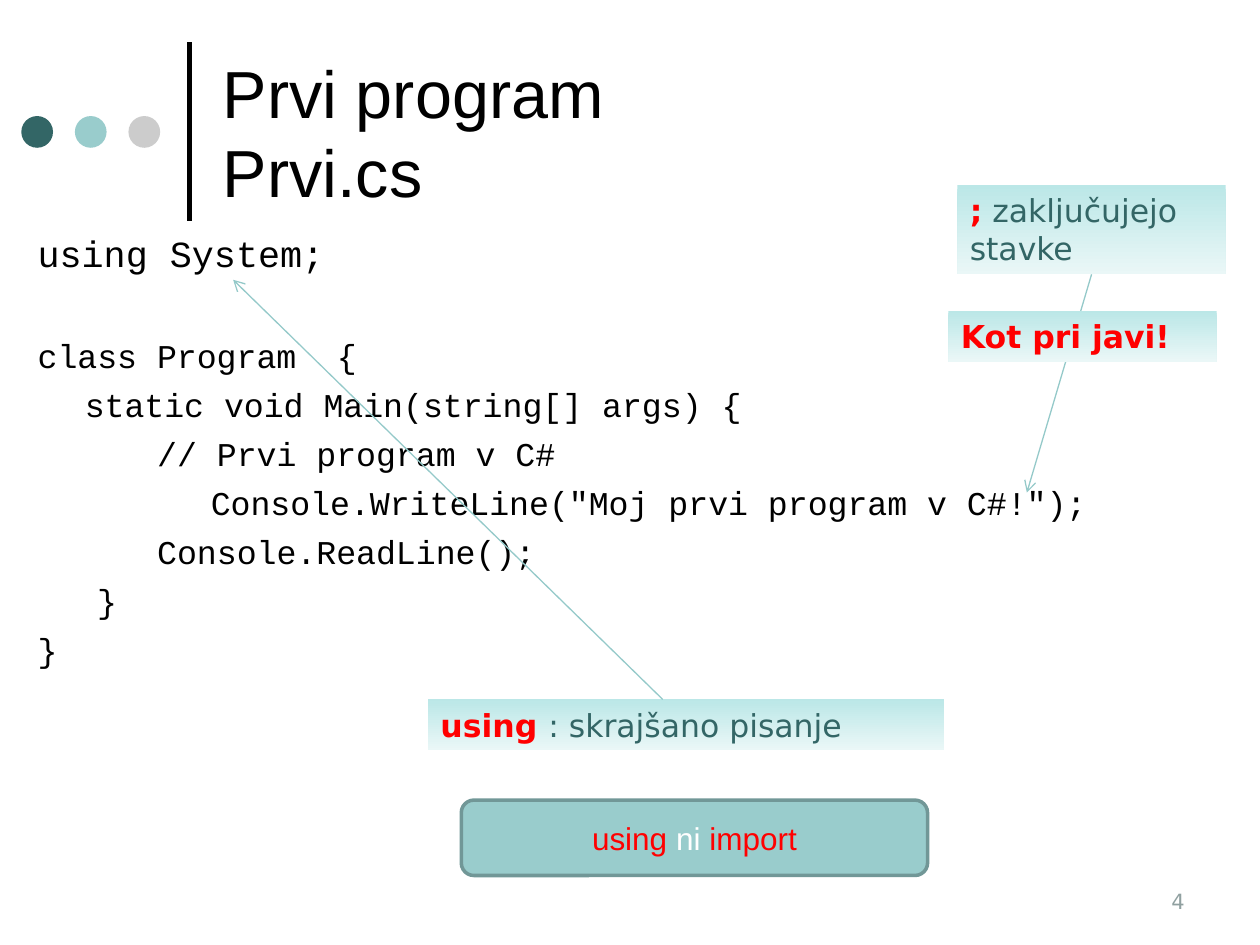
from typing import NamedTuple

from lxml.etree import SubElement
from pptx import Presentation
from pptx.dml.color import RGBColor
from pptx.enum.shapes import MSO_CONNECTOR, MSO_SHAPE
from pptx.enum.text import MSO_ANCHOR, MSO_AUTO_SIZE, PP_ALIGN
from pptx.oxml.ns import qn
from pptx.util import Cm, Pt

BLACK = RGBColor(0x00, 0x00, 0x00)
WHITE = RGBColor(0xFF, 0xFF, 0xFF)
RED = RGBColor(0xFF, 0x00, 0x00)
TEAL = RGBColor(0x33, 0x66, 0x66)
AQUA = RGBColor(0x99, 0xCC, 0xCC)
GREY = RGBColor(0xCC, 0xCC, 0xCC)
EDGE = RGBColor(0x71, 0x97, 0x97)
ARROW = RGBColor(0x94, 0xC9, 0xC9)
MUTED = RGBColor(0x90, 0xA0, 0xA0)
SHADE = (RGBColor(0xBB, 0xE7, 0xE7), RGBColor(0xEA, 0xF7, 0xF7))

SANS, MONO, NOTE = "Arial", "Courier New", "DejaVu Sans"
HANG = 0.95


class Box(NamedTuple):
    left: float
    top: float
    width: float
    height: float

    def cm(self) -> list:
        return [Cm(n) for n in self]


class Run(NamedTuple):
    text: str
    color: RGBColor = BLACK
    bold: bool = False


class Code(NamedTuple):
    text: str
    depth: float = 0
    size: float = 19
    before: float = 5.2


CODE = [
    Code("using System;", size=21),
    Code("class Program\t{", before=35),
    Code("static void Main(string[] args) {", 0.95),
    Code("// Prvi program v C#", 2.41),
    Code('Console.WriteLine("Moj prvi program v C#!");', 3.49),
    Code("Console.ReadLine();", 2.41),
    Code("}", 1.2),
    Code("}"),
]


def write(para, *runs: Run, font=NOTE, size=18, align=PP_ALIGN.LEFT):
    """Fill a paragraph with runs; a newline becomes a line break."""
    para.alignment = align
    for item in runs:
        for row, text in enumerate(item.text.split("\n")):
            if row:
                para.add_line_break()
            run = para.add_run()
            run.text = text
            run.font.name, run.font.size = font, Pt(size)
            run.font.bold = item.bold
            run.font.color.rgb = item.color


def add_shape(slide, kind, box: Box, fill=None, edge=None):
    shape = slide.shapes.add_shape(kind, *box.cm())
    shape.shadow.inherit = False
    if fill:
        shape.fill.solid()
        shape.fill.fore_color.rgb = fill
    if edge:
        shape.line.color.rgb = edge
        shape.line.width = Pt(2)
    else:
        shape.line.fill.background()
    return shape


def add_note(slide, box: Box, *runs: Run):
    note = add_shape(slide, MSO_SHAPE.RECTANGLE, box)
    note.fill.gradient()
    note.fill.gradient_angle = 270
    for stop, color in zip(note.fill.gradient_stops, SHADE):
        stop.color.rgb = color
    frame = note.text_frame
    frame.word_wrap = True
    frame.vertical_anchor = MSO_ANCHOR.TOP
    write(frame.paragraphs[0], *runs)
    return note


def add_line(slide, start, end, color, width, arrow=False):
    line = slide.shapes.add_connector(
        MSO_CONNECTOR.STRAIGHT, *(Cm(n) for n in (*start, *end)))
    line.line.color.rgb = color
    line.line.width = Pt(width)
    if arrow:
        SubElement(line.line._get_or_add_ln(), qn("a:tailEnd"), type="arrow")
    SubElement(line._element.spPr, qn("a:effectLst"))
    return line


def add_title(slide):
    title = slide.shapes.title
    title.left, title.top, title.width, title.height = Box(
        4.24, 0.53, 19.48, 4.24).cm()
    frame = title.text_frame
    frame.auto_size = MSO_AUTO_SIZE.NONE
    frame.vertical_anchor = MSO_ANCHOR.MIDDLE
    write(frame.paragraphs[0], Run("Prvi program\nPrvi.cs"), font=SANS, size=38)


def add_code(slide):
    box = slide.shapes.add_textbox(*Box(0.51, 4.52, 24.33, 11.81).cm())
    box.fill.solid()
    box.fill.fore_color.rgb = WHITE
    frame = box.text_frame
    frame.word_wrap = True
    for row, code in enumerate(CODE):
        para = frame.add_paragraph() if row else frame.paragraphs[0]
        para.space_before = Pt(code.before)
        props = para._p.get_or_add_pPr()
        props.set("marL", str(Cm(code.depth + HANG)))
        props.set("indent", str(Cm(-HANG)))
        write(para, Run(code.text), font=MONO, size=code.size)


def add_page(slide):
    box = slide.shapes.add_textbox(*Box(18.21, 17.65, 5.92, 1.02).cm())
    box.text_frame.word_wrap = True
    box.text_frame.vertical_anchor = MSO_ANCHOR.MIDDLE
    write(box.text_frame.paragraphs[0], Run("4", MUTED), size=12,
          align=PP_ALIGN.RIGHT)


def main():
    deck = Presentation()
    deck.slide_width, deck.slide_height = Cm(25.4), Cm(19.05)
    slide = deck.slides.add_slide(deck.slide_layouts[5])

    add_line(slide, (3.82, 4.45), (3.82, 0.84), BLACK, 3)
    for col, color in enumerate((TEAL, AQUA, GREY)):
        add_shape(slide, MSO_SHAPE.OVAL,
                  Box(0.43 + 1.08 * col, 2.34, 0.64, 0.64), color)
    add_title(slide)
    add_code(slide)
    add_page(slide)

    stop = add_note(slide, Box(19.3, 3.73, 5.41, 1.8),
                    Run(";", RED, True), Run(" zaključujejo stavke", TEAL))
    line = add_line(slide, (22, 5.53), (20.7, 9.93), ARROW, 0.75, arrow=True)
    line.begin_connect(stop, 2)
    add_note(slide, Box(19.12, 6.27, 5.41, 1.02),
             Run("Kot pri javi!", RED, True))

    add_note(slide, Box(8.63, 14.1, 10.4, 1.02),
             Run("using ", RED, True), Run(" : skrajšano pisanje".lstrip(), TEAL))
    add_line(slide, (13.36, 14.1), (4.7, 5.64), ARROW, 0.75, arrow=True)

    rule = add_shape(slide, MSO_SHAPE.ROUNDED_RECTANGLE,
                     Box(9.3, 16.13, 9.4, 1.52), AQUA, EDGE)
    rule.text_frame.vertical_anchor = MSO_ANCHOR.MIDDLE
    write(rule.text_frame.paragraphs[0], Run("using", RED), Run(" ni ", WHITE),
          Run("import", RED), font=SANS, align=PP_ALIGN.CENTER)

    deck.save("out.pptx")


if __name__ == "__main__":
    main()
